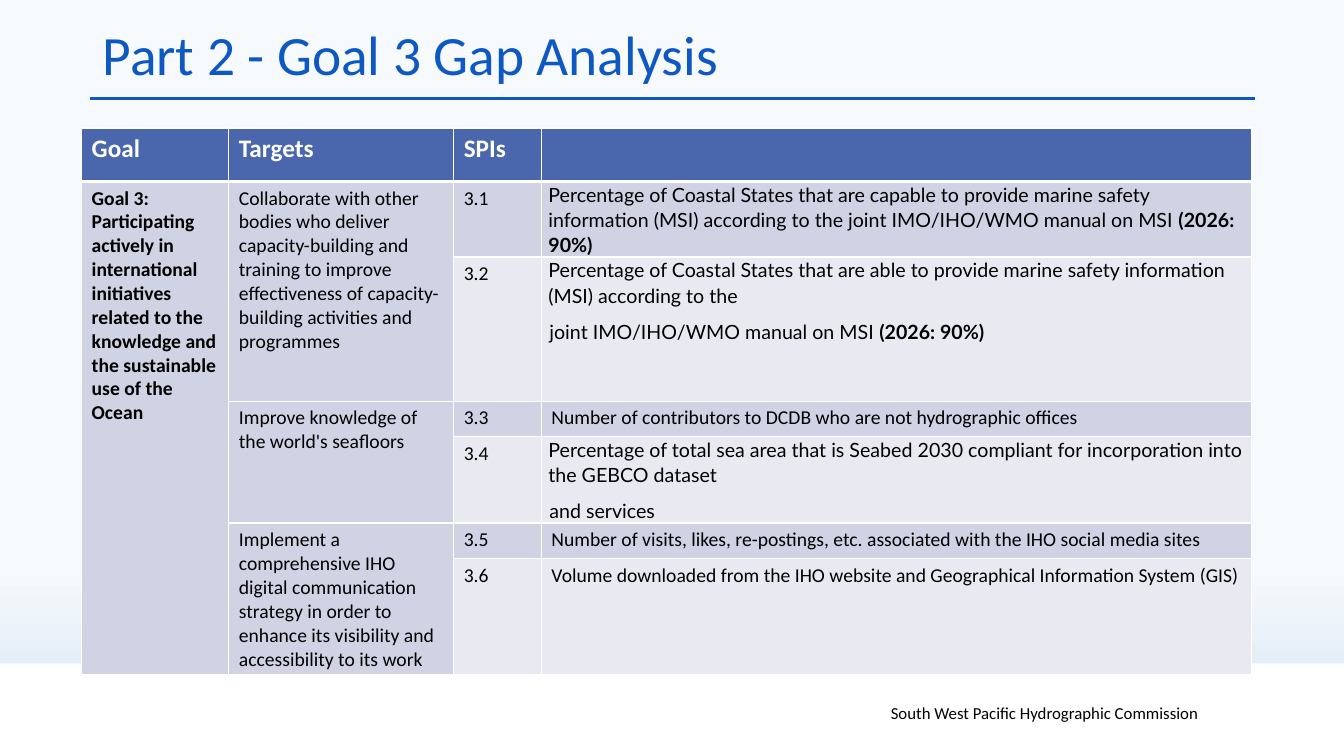
from lxml import etree
from pptx import Presentation
from pptx.dml.color import RGBColor
from pptx.enum.shapes import MSO_CONNECTOR, MSO_SHAPE
from pptx.enum.text import MSO_ANCHOR, PP_ALIGN
from pptx.oxml.ns import qn
from pptx.util import Emu, Pt

PX = 9144  # 100 px to the inch
COLORS = {
    "blue": "0E58C4", "header": "4A66AC", "band_dark": "D0D3E3",
    "band_light": "E9EAF1", "white": "FFFFFF", "black": "000000",
    "sky": "F7FAFD", "horizon": "D0E2F1",
}

COL_WIDTHS = [146, 223, 87, 704]
ROW_HEIGHTS = [53, 46, 143, 35, 84, 35, 110]
HEADERS = ["Goal", "Targets", "SPIs", ""]
GOAL = ("Goal 3: Participating actively in international initiatives related "
        "to the knowledge and the sustainable use of the Ocean")
TARGETS = [
    "Collaborate with other bodies who deliver capacity-building and training "
    "to improve effectiveness of capacity-building activities and programmes",
    "Improve knowledge of the world's seafloors",
    "Implement a comprehensive IHO digital communication strategy in order to "
    "enhance its visibility and accessibility to its work",
]
# A string is a plain indicator; a list holds paragraphs of (text, bold) runs
INDICATORS = [
    [[("Percentage of Coastal States that are capable to provide marine safety "
       "information (MSI) according to the joint IMO/IHO/WMO manual on MSI ", False),
      ("(2026: 90%)", True)]],
    [[("Percentage of Coastal States that are able to provide marine safety "
       "information (MSI) according to the", False)],
     [("joint IMO/IHO/WMO manual on MSI ", False), ("(2026: 90%)", True)]],
    "Number of contributors to DCDB who are not hydrographic offices",
    [[("Percentage of total sea area that is Seabed 2030 compliant for "
       "incorporation into the GEBCO dataset", False)],
     [("and services", False)]],
    "Number of visits, likes, re-postings, etc. associated with the IHO social media sites",
    "Volume downloaded from the IHO website and Geographical Information System (GIS)",
]


def px(*values):
    return [Emu(v * PX) for v in values]


def rgb(name):
    return RGBColor.from_string(COLORS[name])


def write(tf, content, size=14, color="black", font="Calibri", bold=False,
          align=PP_ALIGN.LEFT, line_spacing=None, space_after=None, indent=0):
    """Fill a text frame with a string or with paragraphs of (text, bold) runs."""
    paragraphs = [[(content, bold)]] if isinstance(content, str) else content
    for i, runs in enumerate(paragraphs):
        p = tf.add_paragraph() if i else tf.paragraphs[0]
        if i and indent:
            p._p.get_or_add_pPr().set("marL", str(indent * PX))
        p.alignment = align
        p.line_spacing = line_spacing
        p.space_after = space_after
        for text, is_bold in runs:
            r = p.add_run()
            r.text = text
            r.font.name, r.font.size, r.font.bold = font, Pt(size), is_bold
            r.font.color.rgb = rgb(color)


def add_text(s, box, text, **style):
    tf = s.shapes.add_textbox(*px(*box)).text_frame
    tf.word_wrap = True
    tf.vertical_anchor = MSO_ANCHOR.MIDDLE
    write(tf, text, **style)


def add_rule(s, x1, x2, y):
    line = s.shapes.add_connector(MSO_CONNECTOR.STRAIGHT, *px(x1, y, x2, y))
    line.line.color.rgb = rgb("blue")
    line.line.width = Pt(2.25)
    etree.SubElement(line._element.spPr, qn("a:effectLst"))


def add_band(s, box):
    sp = s.shapes.add_shape(MSO_SHAPE.RECTANGLE, *px(*box))
    sp.shadow.inherit = False
    sp.fill.solid()
    sp.fill.fore_color.rgb = rgb("white")
    sp.line.fill.background()


def set_background(s):
    fill = s.background.fill
    fill.gradient()
    fill.gradient_angle = 270
    for stop, (position, color) in zip(fill.gradient_stops, [(0.75, "sky"), (1, "horizon")]):
        stop.position = position
        stop.color.rgb = rgb(color)


def style_cell(cell, color, top=1, bottom=1):
    tcPr = cell._tc.get_or_add_tcPr()
    for tag, width in (("lnL", 1), ("lnR", 1), ("lnT", top), ("lnB", bottom)):
        ln = etree.SubElement(tcPr, qn(f"a:{tag}"), w=str(Pt(width)))
        fill = etree.SubElement(ln, qn("a:solidFill"))
        etree.SubElement(fill, qn("a:srgbClr"), val=COLORS["white"])
    cell.fill.solid()
    cell.fill.fore_color.rgb = rgb(color)


def write_indicator(cell, content):
    if isinstance(content, str):
        write(cell.text_frame, content)
        return
    cell.margin_left, cell.margin_right, cell.margin_top, cell.margin_bottom = px(7, 7, 0, 0)
    write(cell.text_frame, content, font="Lato", line_spacing=1.07,
          space_after=Pt(8), indent=1)


def add_goal_table(s, left, top):
    box = px(left, top, sum(COL_WIDTHS), sum(ROW_HEIGHTS))
    table = s.shapes.add_table(len(ROW_HEIGHTS), len(COL_WIDTHS), *box).table
    for col, width in zip(table.columns, px(*COL_WIDTHS)):
        col.width = width
    for row, height in zip(table.rows, px(*ROW_HEIGHTS)):
        row.height = height

    # Fills and borders: indicator columns alternate, merged columns stay dark
    for r in range(len(ROW_HEIGHTS)):
        for c in range(len(COL_WIDTHS)):
            light = c > 1 and r % 2 == 0
            color = "header" if r == 0 else "band_light" if light else "band_dark"
            style_cell(table.cell(r, c), color,
                       top=3 if r == 1 else 1, bottom=3 if r == 0 else 1)

    # Header row
    for c, text in enumerate(HEADERS):
        if text:
            write(table.cell(0, c).text_frame, text, size=18, color="white", bold=True)

    # Goal spans all body rows, each target spans two
    table.cell(1, 0).merge(table.cell(6, 0))
    write(table.cell(1, 0).text_frame, GOAL, bold=True)
    for i, target in enumerate(TARGETS):
        first = 1 + 2 * i
        table.cell(first, 1).merge(table.cell(first + 1, 1))
        write(table.cell(first, 1).text_frame, target)

    # Numbered indicators
    for r, indicator in enumerate(INDICATORS, start=1):
        write(table.cell(r, 2).text_frame, f"3.{r}")
        write_indicator(table.cell(r, 3), indicator)


def main():
    prs = Presentation()
    prs.slide_width, prs.slide_height = px(1333, 750)
    s = prs.slides.add_slide(prs.slide_layouts[6])

    # Backdrop and footer
    set_background(s)
    add_rule(s, 89, 1245, 98)
    add_band(s, (0, 658, 1333, 92))
    add_text(s, (860, 687, 352, 40), "South West Pacific Hydrographic Commission",
             size=12, align=PP_ALIGN.CENTER)

    # Title and table
    add_text(s, (92, 28, 1150, 59), "Part 2 - Goal 3 Gap Analysis",
             size=39.6, color="blue", line_spacing=0.9)
    add_goal_table(s, 81, 127)
    prs.save("out.pptx")


if __name__ == "__main__":
    main()
